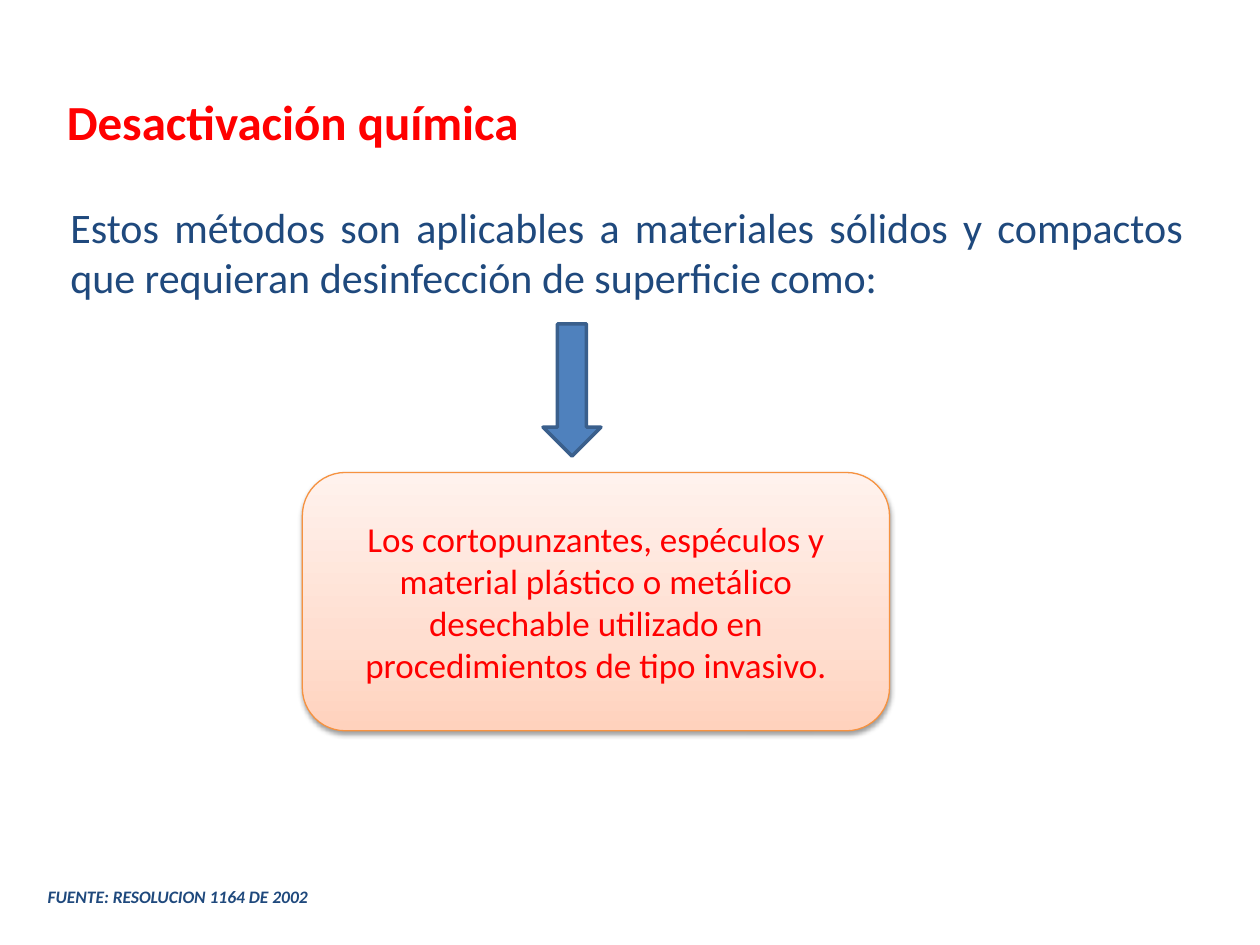
from lxml.etree import SubElement
from pptx import Presentation
from pptx.dml.color import RGBColor
from pptx.enum.shapes import MSO_SHAPE as Shape
from pptx.enum.text import MSO_ANCHOR as Anchor, PP_ALIGN as Align
from pptx.oxml.ns import qn
from pptx.util import Inches, Pt

# Content: text, position (left, top, width, height), role
TITLE = ("Desactivación química", (0.43, 0.68, 8.29, 0.57), "title")
TEXTS = [
    ("Estos métodos son aplicables a materiales sólidos y compactos que "
     "requieran desinfección de superficie como:", (0.46, 1.55, 9.03, 1.31), "body"),
    ("FUENTE: RESOLUCION 1164 DE 2002", (0.28, 6.98, 5, 0.27), "source"),
]
CARD = ("Los cortopunzantes, espéculos y material plástico o metálico "
        "desechable utilizado en procedimientos de tipo invasivo.",
        (2.4, 3.75, 4.66, 2.05), "card")
ARROW_AREA = (4.31, 2.57, 0.46, 1.05)

THEME = {
    "font": "Calibri",
    "title": dict(size=28, color="FF0000", align=Align.LEFT, bold=True),
    "body": dict(size=24, color="1F497D", align=Align.JUSTIFY),
    "card": dict(size=20, color="FF0000", align=Align.CENTER),
    "source": dict(size=10, color="1F497D", align=Align.LEFT, bold=True, italic=True),
    "card_line": ("F69240", 0.75),
    "card_stops": [(0, "FFD2BD"), (35, "FFDED0"), (100, "FFF2ED")],
    "card_shadow": dict(color="000000", alpha=38, blur=3.1, distance=1.6, angle=90),
    "arrow_fill": "4F81BD",
    "arrow_line": ("3A5F8C", 2),
}


def inches(area):
    return [Inches(value) for value in area]


def write(box, text, role, anchor=Anchor.TOP):
    style = THEME[role]
    frame = box.text_frame
    frame.word_wrap = True
    frame.vertical_anchor = anchor
    para = frame.paragraphs[0]
    para.alignment = style["align"]
    span = para.add_run()
    span.text = text
    formats = {"name": THEME["font"], "size": Pt(style["size"]),
               "bold": style.get("bold", False), "italic": style.get("italic", False)}
    for name, value in formats.items():
        setattr(span.font, name, value)
    span.font.color.rgb = RGBColor.from_string(style["color"])


def outline(shape, color, width):
    shape.line.color.rgb = RGBColor.from_string(color)
    shape.line.width = Pt(width)


def add_element(parent, tag, **attributes):
    return SubElement(parent, qn(tag), {key: str(value) for key, value in attributes.items()})


def fill_gradient(shape, stops, angle):
    shape.fill.gradient()
    gradient = shape.fill._xPr.find(qn("a:gradFill"))
    for child in list(gradient):
        gradient.remove(child)
    stop_list = add_element(gradient, "a:gsLst")
    for position, color in stops:
        stop = add_element(stop_list, "a:gs", pos=position * 1000)
        add_element(stop, "a:srgbClr", val=color)
    add_element(gradient, "a:lin", ang=angle * 60000, scaled=1)


def add_shadow(shape, color, alpha, blur, distance, angle):
    shape.shadow.inherit = False
    effects = shape._element.spPr.find(qn("a:effectLst"))
    shadow = add_element(effects, "a:outerShdw", blurRad=Pt(blur), dist=Pt(distance),
                         dir=angle * 60000, rotWithShape=0)
    tint = add_element(shadow, "a:srgbClr", val=color)
    add_element(tint, "a:alpha", val=alpha * 1000)


def main():
    deck = Presentation()
    deck.slide_width, deck.slide_height = Inches(10), Inches(7.5)
    page = deck.slides.add_slide(deck.slide_layouts[5])

    # Title
    text, area, role = TITLE
    title = page.shapes.title
    title.left, title.top, title.width, title.height = inches(area)
    write(title, text, role)

    # Paragraph and source line
    for text, area, role in TEXTS:
        write(page.shapes.add_textbox(*inches(area)), text, role)

    # Card with its gradient and shadow
    text, area, role = CARD
    card = page.shapes.add_shape(Shape.ROUNDED_RECTANGLE, *inches(area))
    fill_gradient(card, THEME["card_stops"], 270)
    outline(card, *THEME["card_line"])
    add_shadow(card, **THEME["card_shadow"])
    write(card, text, role, Anchor.MIDDLE)

    # Arrow from the paragraph to the card
    arrow = page.shapes.add_shape(Shape.DOWN_ARROW, *inches(ARROW_AREA))
    arrow.shadow.inherit = False
    arrow.fill.solid()
    arrow.fill.fore_color.rgb = RGBColor.from_string(THEME["arrow_fill"])
    outline(arrow, *THEME["arrow_line"])

    deck.save("out.pptx")


if __name__ == "__main__":
    main()
